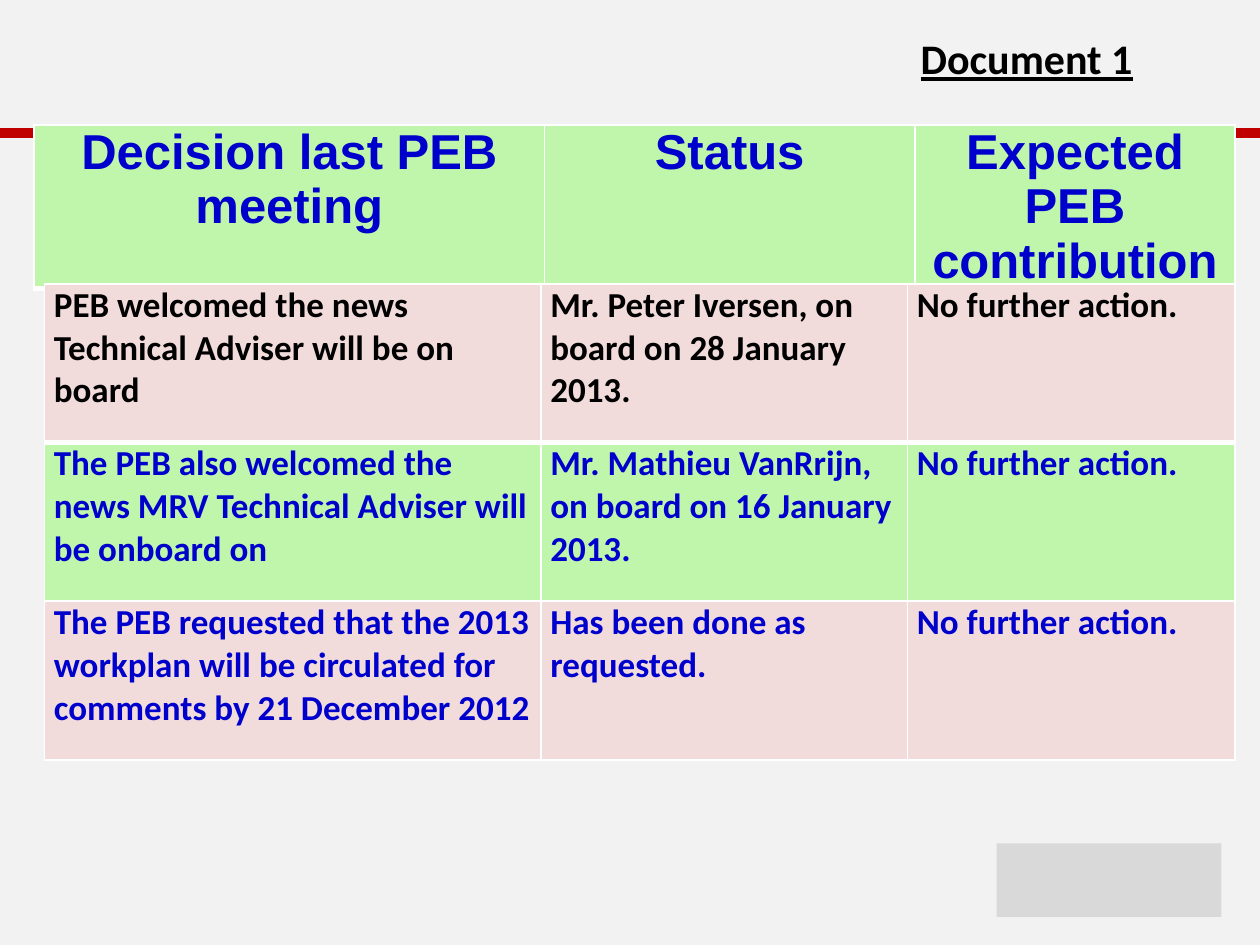
"""Build the board decision status slide."""
from dataclasses import dataclass

from lxml import etree
from pptx import Presentation
from pptx import util as u
from pptx.dml.color import RGBColor
from pptx.enum import shapes, text
from pptx.oxml.ns import qn

BLACK, BLUE, GREEN, PINK = "000000", "0000CC", "BFF6AC", "F2DCDB"


@dataclass
class Row:
    texts: tuple[str, ...]
    fill: str
    color: str
    bottom_border: float = 1


@dataclass
class Grid:
    left: float
    top: float
    columns: tuple[float, ...]
    row_height: float
    rows: tuple[Row, ...]
    font: str
    size: float
    align: text.PP_ALIGN = text.PP_ALIGN.LEFT
    space_before: float = 0


@dataclass
class Block:
    preset: shapes.MSO_SHAPE
    left: float
    top: float
    width: float
    height: float
    fill: str


HEADER = Grid(
    19.5, 71.3, (291.6, 211.7, 182.9), 85,
    (Row(("Decision last PEB meeting", "Status", "Expected PEB contribution"), GREEN, BLUE, 3),),
    "Arial", 28, text.PP_ALIGN.CENTER, 6,
)
DECISIONS = Grid(
    25.4, 162.2, (283.7, 209.5, 187.2), 90.7,
    (
        Row(("PEB welcomed the news Technical Adviser will be on board",
             "Mr. Peter Iversen, on board on 28 January 2013.",
             "No further action."), PINK, BLACK, 3),
        Row(("The PEB also welcomed the news MRV Technical Adviser will be onboard on",
             "Mr. Mathieu VanRrijn, on board on 16 January 2013.",
             "No further action."), GREEN, BLUE),
        Row(("The PEB requested that the 2013 workplan will be circulated for comments by 21 December 2012",
             "Has been done as requested.",
             "No further action."), PINK, BLUE),
    ),
    "Calibri", 20,
)
BLOCKS = (
    Block(shapes.MSO_SHAPE.FLOWCHART_PROCESS, 0, 73.2, 720, 5.8, "C00000"),
    Block(shapes.MSO_SHAPE.RECTANGLE, 569.5, 482, 128.5, 42, "D9D9D9"),
)


def paint(target, color: str) -> None:
    target.solid()
    target.fore_color.rgb = RGBColor.from_string(color)


def style_font(font, name: str, size: float, color: str) -> None:
    font.name, font.size, font.bold = name, u.Pt(size), True
    paint(font.fill, color)


def add_border(cell, side: str, width: float) -> None:
    properties = cell._tc.get_or_add_tcPr()
    line = etree.SubElement(properties, qn(f"a:ln{side}"), w=str(u.Pt(width)))
    fill = etree.SubElement(line, qn("a:solidFill"))
    etree.SubElement(fill, qn("a:srgbClr"), val="FFFFFF")


def fill_cell(cell, content: str, row: Row, grid: Grid) -> None:
    cell.margin_left = cell.margin_right = u.Pt(5.4)
    cell.margin_top = cell.margin_bottom = 0
    for side in "LRT":
        add_border(cell, side, 1)
    add_border(cell, "B", row.bottom_border)
    paint(cell.fill, row.fill)
    cell.text = content
    paragraph = cell.text_frame.paragraphs[0]
    paragraph.alignment = grid.align
    paragraph.space_before = u.Pt(grid.space_before)
    style_font(paragraph.font, grid.font, grid.size, row.color)


def add_grid(slide, grid: Grid) -> None:
    table = slide.shapes.add_table(
        len(grid.rows), len(grid.columns), u.Pt(grid.left), u.Pt(grid.top),
        u.Pt(sum(grid.columns)), u.Pt(grid.row_height * len(grid.rows)),
    ).table
    table.first_row = table.horz_banding = False
    for column, width in zip(table.columns, grid.columns):
        column.width = u.Pt(width)
    for table_row, row in zip(table.rows, grid.rows):
        table_row.height = u.Pt(grid.row_height)
        for cell, content in zip(table_row.cells, row.texts):
            fill_cell(cell, content, row, grid)


def add_block(slide, block: Block) -> None:
    shape = slide.shapes.add_shape(
        block.preset, u.Pt(block.left), u.Pt(block.top), u.Pt(block.width), u.Pt(block.height))
    shape.shadow.inherit = False
    paint(shape.fill, block.fill)
    shape.line.fill.background()


def add_document_label(slide) -> None:
    frame = slide.shapes.add_textbox(
        u.Pt(479), u.Pt(15.1), u.Pt(215.3), u.Pt(45.4)).text_frame
    frame.word_wrap = True
    paragraph = frame.paragraphs[0]
    paragraph.text = "Document 1"
    paragraph.alignment = text.PP_ALIGN.CENTER
    paragraph.space_before = u.Pt(4.8)
    style_font(paragraph.font, "Calibri", 24, BLACK)
    paragraph.font.underline = True


def main() -> None:
    presentation = Presentation()
    presentation.slide_width, presentation.slide_height = u.Pt(720), u.Pt(540)
    slide = presentation.slides.add_slide(presentation.slide_layouts[6])
    paint(slide.background.fill, "F2F2F2")
    for block in BLOCKS:
        add_block(slide, block)
    for grid in (HEADER, DECISIONS):
        add_grid(slide, grid)
    add_document_label(slide)
    presentation.save("out.pptx")


if __name__ == "__main__":
    main()
